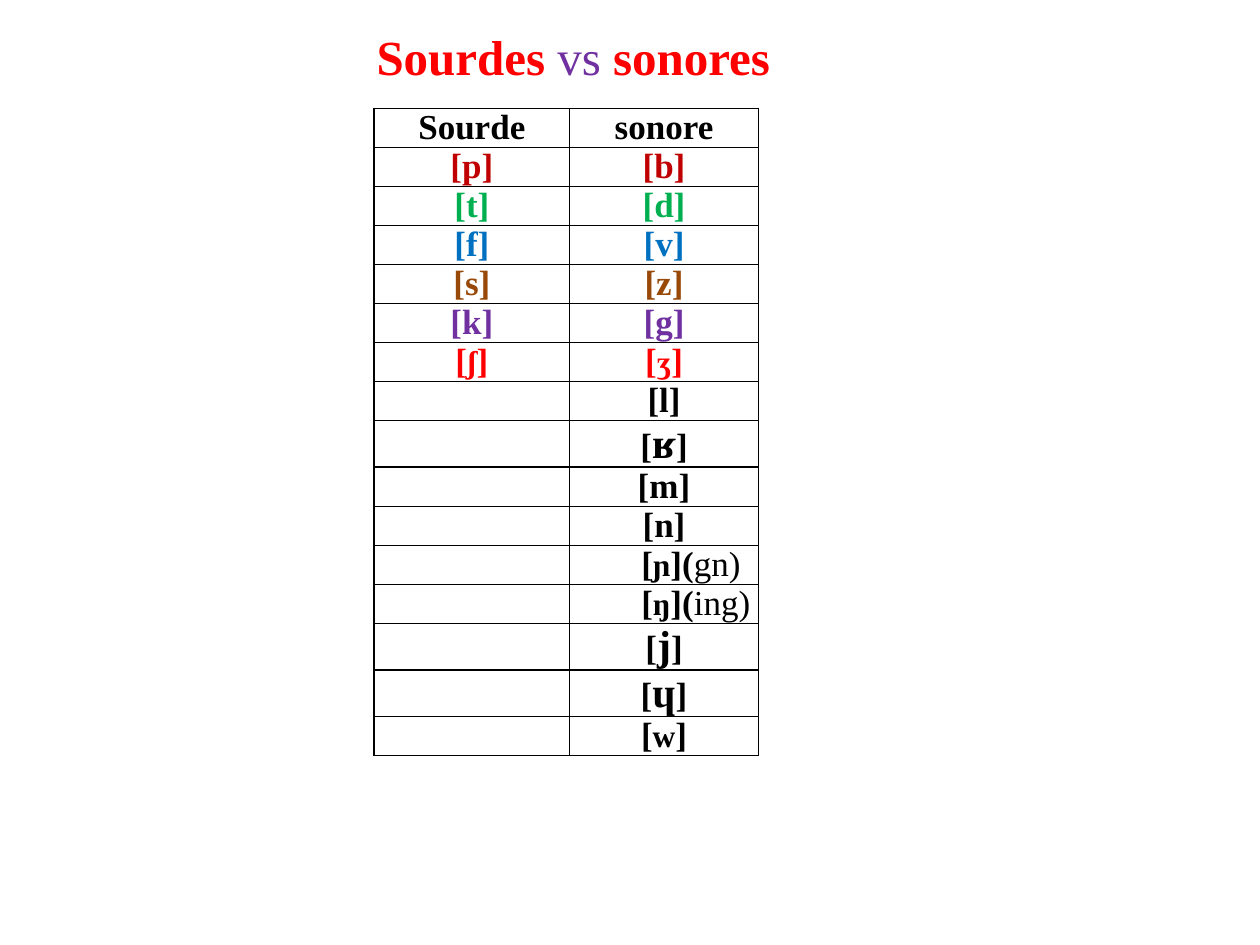
from lxml.etree import SubElement as Sub
from pptx import Presentation
from pptx.dml.color import RGBColor
from pptx.enum.text import MSO_ANCHOR, MSO_AUTO_SIZE as Fit, PP_ALIGN as Align
from pptx.oxml.ns import qn
from pptx.util import Inches, Pt

FONT = "Times New Roman"
BLACK, RED, PURPLE = "000000", "FF0000", "7030A0"
TITLE = [("Sourdes ", RED, True), ("vs ", PURPLE, False), ("sonores", RED, True)]
HEAD = ("Sourde", "sonore")
PAIRS = [
    ("p", "b", "C00000"),
    ("t", "d", "00B050"),
    ("f", "v", "0070C0"),
    ("s", "z", "984807"),
    ("k", "g", PURPLE),
    ("ʃ", "ʒ", RED),
]
VOICED = [("l", ""), ("ʁ", ""), ("m", ""), ("n", ""), ("ɲ", "gn"),
          ("ŋ", "ing"), ("j", ""), ("ɥ", ""), ("w", "")]
SIZES = {"ʃ": 18, "ʒ": 18, "ɲ": 18, "ŋ": 18, "w": 18, "ʁ": 24, "j": 24, "ɥ": 24}
TIGHT = "ʃʒʁjɥ"
WIDTHS = (1.55, 1.5)
ROW, TALL = 0.31, 0.37
PAD, INDENT = 0.07, 0.57


def add_run(para, text, color=BLACK, size=20, bold=True):
    run = para.add_run()
    run.text = text
    font = run.font
    font.name, font.size, font.bold = FONT, Pt(size), bold
    font.color.rgb = RGBColor.from_string(color)
    return run


def add_sound(para, sound, color=BLACK, note=""):
    size = SIZES.get(sound, 20)
    if size == 20:
        add_run(para, f"[{sound}]", color)
        return
    add_run(para, "[", color)
    run = add_run(para, sound, color, size)
    if sound in TIGHT:
        run.font._element.set("spc", "-30")
    add_run(para, "](" if note else "]", color)
    if note:
        add_run(para, note + ")", color, bold=False)


def style(cell):
    cell.margin_left = cell.margin_right = Inches(PAD)
    cell.margin_top = cell.margin_bottom = 0
    cell.vertical_anchor = MSO_ANCHOR.TOP
    props = cell._tc.get_or_add_tcPr()
    for side in ("L", "R", "T", "B"):
        line = Sub(props, qn("a:ln" + side), w=str(Pt(1)))
        fill = Sub(line, qn("a:solidFill"))
        Sub(fill, qn("a:srgbClr"), val=BLACK)
    cell.fill.background()
    para = cell.text_frame.paragraphs[0]
    para.alignment = Align.CENTER
    return para


prs = Presentation()
prs.slide_width, prs.slide_height = Inches(10), Inches(7.5)
slide = prs.slides.add_slide(prs.slide_layouts[6])

rows = [(a, b, color, "") for a, b, color in PAIRS]
rows += [("", sound, BLACK, note) for sound, note in VOICED]
highs = [ROW] + [TALL if SIZES.get(row[1]) == 24 else ROW for row in rows]
table = slide.shapes.add_table(
    len(highs), 2, Inches(2.97), Inches(0.86),
    Inches(sum(WIDTHS)), Inches(sum(highs))).table
table.first_row = table.horz_banding = False
for col, width in zip(table.columns, WIDTHS):
    col.width = Inches(width)
for row, high in zip(table.rows, highs):
    row.height = Inches(high)

for x, text in enumerate(HEAD):
    add_run(style(table.cell(0, x)), text)
for y, (*pair, color, note) in enumerate(rows, 1):
    for x, sound in enumerate(pair):
        cell = table.cell(y, x)
        para = style(cell)
        if not sound:
            para.font.size = Pt(18)
            continue
        add_sound(para, sound, color, note if x else "")
        if x and note:
            para.alignment = Align.LEFT
            cell.margin_left, cell.margin_right = Inches(INDENT), 0

box = slide.shapes.add_textbox(Inches(2.89), Inches(0.16), Inches(3.36), Inches(0.57))
frame = box.text_frame
frame.word_wrap = False
frame.auto_size = Fit.SHAPE_TO_FIT_TEXT
for text, color, bold in TITLE:
    add_run(frame.paragraphs[0], text, color, 28, bold)

prs.save("out.pptx")
